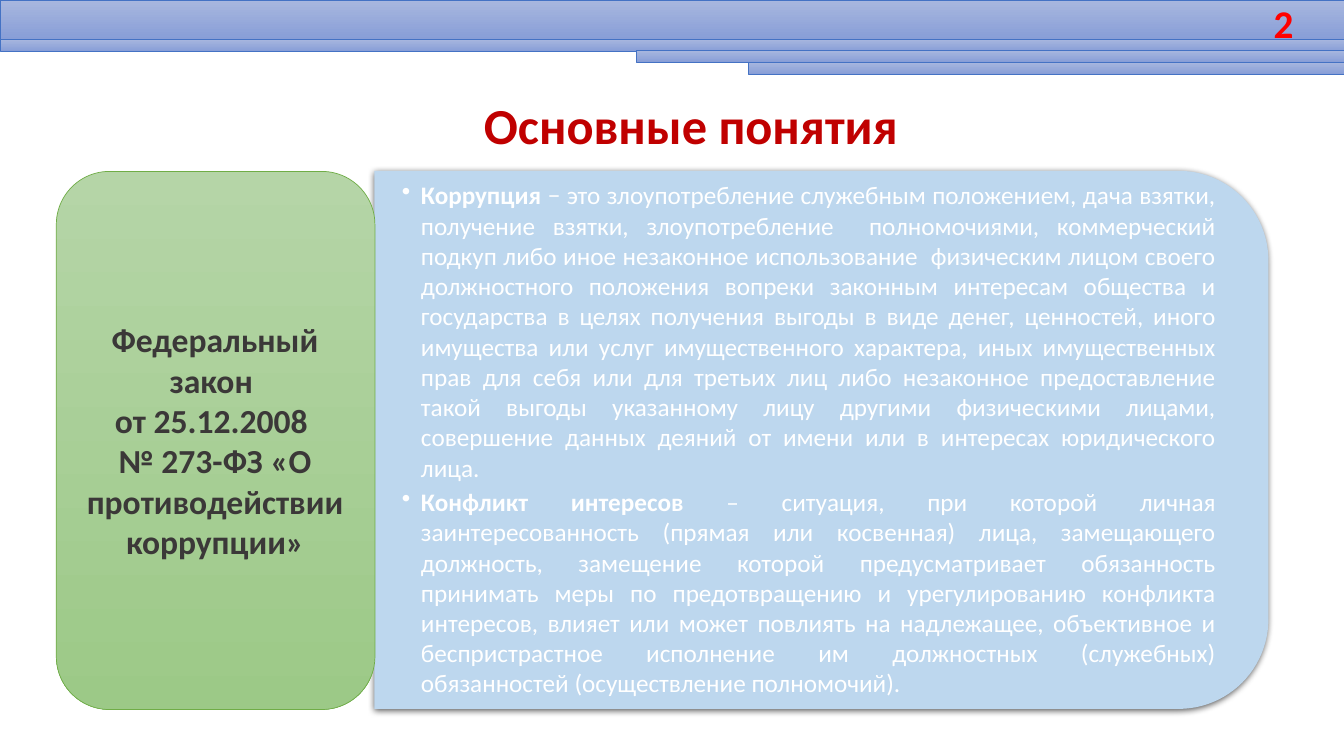
import pptx
import pptx.util
import pptx.dml.color
import pptx.enum.shapes
import pptx.enum.text
import pptx.oxml
import pptx.oxml.ns

Cm, Pt = pptx.util.Cm, pptx.util.Pt
RGBColor = pptx.dml.color.RGBColor
SHAPE = pptx.enum.shapes.MSO_SHAPE
ALIGN = pptx.enum.text.PP_ALIGN
ANCHOR = pptx.enum.text.MSO_ANCHOR

WHITE = RGBColor(0xFF, 0xFF, 0xFF)
PALE_BLUE = RGBColor(0xBD, 0xD7, 0xEE)
GREEN_TOP = RGBColor(0xB5, 0xD5, 0xA7)
GREEN_BOTTOM = RGBColor(0x9C, 0xC9, 0x87)
GREEN_LINE = RGBColor(0x70, 0xAD, 0x47)
BAR_TOP = RGBColor(0xA8, 0xB7, 0xDF)
BAR_BOTTOM = RGBColor(0x88, 0x9E, 0xD7)
BAR_LINE = RGBColor(0x44, 0x72, 0xC4)
DARK = RGBColor(0x3B, 0x38, 0x38)
DARK_RED = RGBColor(0xC0, 0x00, 0x00)
RED = RGBColor(0xFF, 0x00, 0x00)

LAW = ["Федеральный закон \vот 25.12.2008 ", "№ 273-ФЗ «О противодействии коррупции»"]
TERMS = [
    ("Коррупция ",
     "− это злоупотребление служебным положением, дача взятки, получение взятки, "
     "злоупотребление  полномочиями, коммерческий подкуп либо иное незаконное "
     "использование  физическим лицом своего должностного положения вопреки законным "
     "интересам общества и государства в целях получения выгоды в виде денег, "
     "ценностей, иного имущества или услуг имущественного характера, иных "
     "имущественных прав для себя или для третьих лиц либо незаконное предоставление "
     "такой выгоды указанному лицу другими физическими лицами, совершение данных "
     "деяний от имени или в интересах юридического лица."),
    ("Конфликт интересов ",
     "– ситуация, при которой личная заинтересованность (прямая или косвенная) лица, "
     "замещающего должность, замещение которой предусматривает обязанность принимать "
     "меры по предотвращению и урегулированию конфликта интересов, влияет или может "
     "повлиять на надлежащее, объективное и беспристрастное исполнение им должностных "
     "(служебных) обязанностей (осуществление полномочий)."),
]


class Deck:
    """Holds the slide style and the current slide."""

    font = "Calibri"

    def __init__(self):
        self.prs = pptx.Presentation()
        self.prs.slide_width, self.prs.slide_height = Cm(33.87), Cm(19.05)
        self.s = self.prs.slides.add_slide(self.prs.slide_layouts[6])

    def shape(self, kind, box):
        sp = self.s.shapes.add_shape(kind, *map(Cm, box))
        sp.shadow.inherit = False
        return sp

    def gradient(self, kind, box, top, bottom, line):
        sp = self.shape(kind, box)
        sp.fill.gradient()
        sp.fill.gradient_angle = 270
        for stop, color, position in zip(sp.fill.gradient_stops, (top, bottom), (0, 1)):
            stop.color.rgb = color
            stop.position = position
        sp.line.color.rgb = line
        sp.line.width = Pt(0.5)

    def panel(self, box, color):
        sp = self.shape(SHAPE.ROUND_2_SAME_RECTANGLE, box)
        sp.rotation = 90
        sp.fill.solid()
        sp.fill.fore_color.rgb = color
        sp.line.fill.background()
        effects = sp._element.spPr.find(pptx.oxml.ns.qn("a:effectLst"))
        effects.append(pptx.oxml.parse_xml(
            f'<a:outerShdw {pptx.oxml.ns.nsdecls("a")} blurRad="{Pt(4.5)}" '
            f'dist="{Pt(1.5)}" dir="5400000" algn="ctr" rotWithShape="0">'
            '<a:srgbClr val="000000"><a:alpha val="63000"/></a:srgbClr></a:outerShdw>'))

    def frame(self, box, anchor=ANCHOR.MIDDLE, wrap=True):
        tf = self.s.shapes.add_textbox(*map(Cm, box)).text_frame
        tf.word_wrap = wrap
        tf.vertical_anchor = anchor
        return tf

    def style(self, p, size, color, align, bold=None):
        p.alignment = align
        p.font.name, p.font.size, p.font.bold = self.font, Pt(size), bold
        p.font.color.rgb = color

    def text(self, box, lines, size, color, align=ALIGN.CENTER, **options):
        tf = self.frame(box, **options)
        tf.text = "\n".join(lines)
        for p in tf.paragraphs:
            self.style(p, size, color, align, True)

    def definitions(self, box, terms, size, color):
        tf = self.frame(box)
        tf.margin_left = tf.margin_right = Cm(0.68)
        tf.margin_top = tf.margin_bottom = Cm(0.36)
        for i, (term, meaning) in enumerate(terms):
            p = tf.add_paragraph() if i else tf.paragraphs[0]
            for words, bold in ((term, True), (meaning, False)):
                r = p.add_run()
                r.text, r.font.bold = words, bold
            self.style(p, size, color, ALIGN.JUSTIFY)
            p.space_after = Pt(3)
            pPr = p._p.get_or_add_pPr()
            pPr.set("marL", str(Cm(0.48)))
            pPr.set("indent", str(-Cm(0.48)))
            bullet = pptx.oxml.parse_xml(
                f'<a:buChar {pptx.oxml.ns.nsdecls("a")} char="•"/>')
            pPr.insert_element_before(bullet, "a:tabLst", "a:defRPr", "a:extLst")


def main():
    deck = Deck()
    deck.panel((13.92, -0.18, 13.56, 22.53), PALE_BLUE)
    deck.definitions((9.45, 4.95, 21.87, 12.22), TERMS, 18, WHITE)
    deck.gradient(SHAPE.ROUNDED_RECTANGLE, (1.42, 4.32, 8.03, 13.56),
                  GREEN_TOP, GREEN_BOTTOM, GREEN_LINE)
    deck.text((1.8, 4.7, 7.24, 12.78), LAW, 24, DARK)
    deck.text((8.69, 2.34, 17.45, 1.57), ["Основные понятия"], 36, DARK_RED)
    for left, top, height in ((0, 0, 0.99), (0, 0.99, 0.3),
                              (16.03, 1.27, 0.3), (18.87, 1.57, 0.3)):
        deck.gradient(SHAPE.RECTANGLE, (left, top, 33.87 - left, height),
                      BAR_TOP, BAR_BOTTOM, BAR_LINE)
    deck.text((31.85, -0.13, 1.02, 1.45), ["2"], 28, RED, ALIGN.LEFT,
              anchor=ANCHOR.TOP, wrap=False)
    deck.prs.save("out.pptx")


if __name__ == "__main__":
    main()
